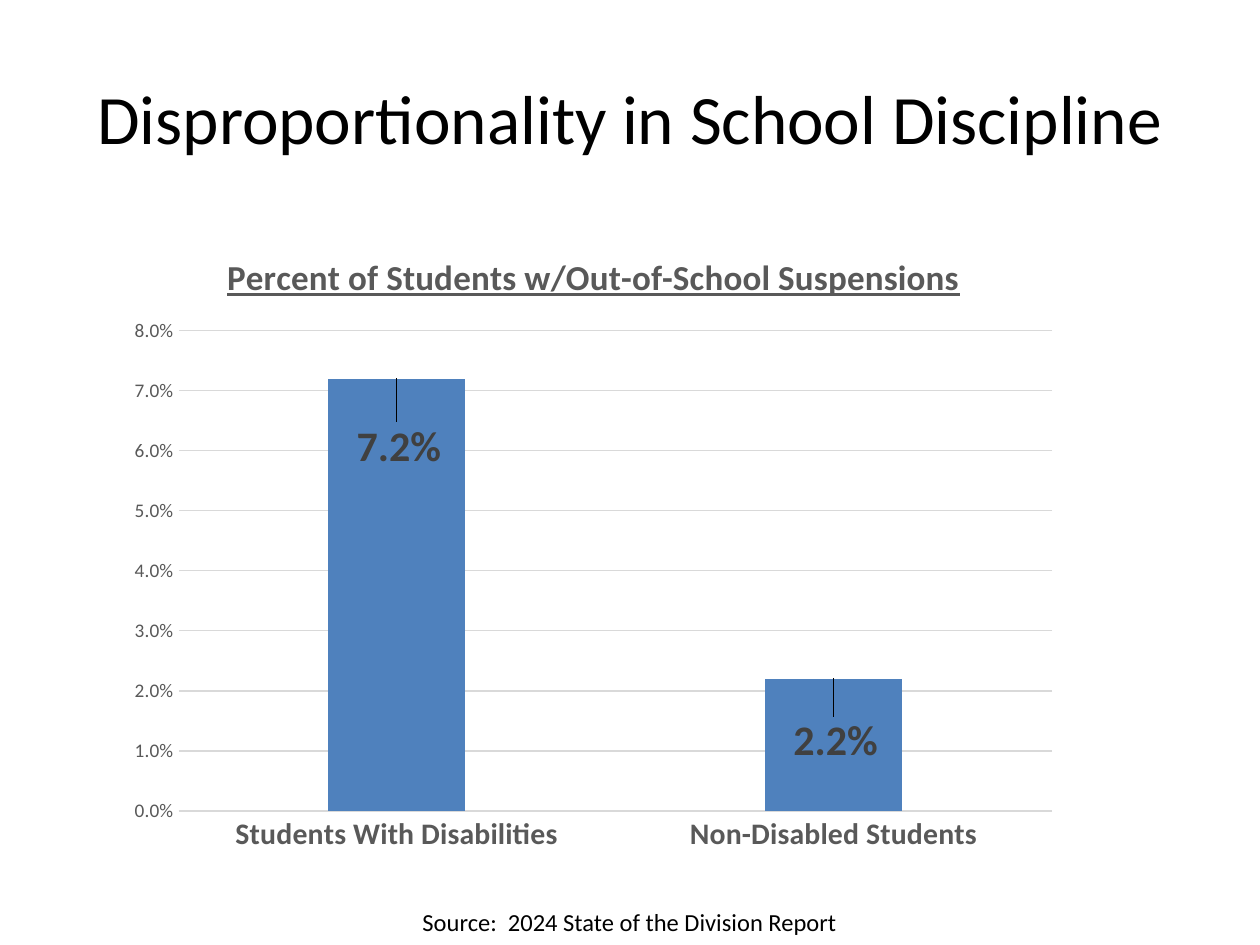
from dataclasses import dataclass
from lxml.etree import SubElement
from pptx import Presentation
from pptx.chart.data import CategoryChartData as ChartData
from pptx.dml.color import RGBColor as Rgb
from pptx.enum.chart import XL_CHART_TYPE as Kind, XL_LABEL_POSITION as Pos, XL_TICK_MARK as Tick
from pptx.enum.text import MSO_ANCHOR as Anchor, PP_ALIGN as Align
from pptx.oxml import parse_xml
from pptx.oxml.ns import nsdecls, qn
from pptx.util import Cm, Pt

FACE = "Calibri"
HUES = {"ink": "000000", "gray": "595959", "label": "404040", "grid": "D9D9D9", "bar": "4F81BD"}
WIDE, HIGH = 19.25, 12.78


@dataclass
class Note:
    text: str
    box: tuple[float, float, float, float]
    size: float
    anchor: Anchor


@dataclass
class Bar:
    name: str
    rate: float
    drop: float


NOTES = [
    Note("Disproportionality in School Discipline", (1.27, 0.76, 22.86, 3.18), 39.6, Anchor.MIDDLE),
    Note("Source:  2024 State of the Division Report", (4.02, 18.16, 17.35, 0.86), 14, Anchor.TOP),
]
BARS = [
    Bar("Students With Disabilities", 0.072, 2.0),
    Bar("Non-Disabled Students", 0.022, 1.89),
]


def style(font, size: float, hue: str, bold: bool = False) -> None:
    """Set the face, size, colour and weight of a font."""
    font.name, font.size, font.bold = FACE, Pt(size), bold
    font.color.rgb = Rgb.from_string(HUES[hue])


def rule(line) -> None:
    """Give a chart line its thin light look."""
    line.color.rgb = Rgb.from_string(HUES["grid"])
    line.width = Pt(0.75)


def layout(modes: dict[str, str], **sides: float):
    """Make a manual chart layout from modes and sides in centimetres."""
    node = parse_xml(f"<c:layout {nsdecls('c')}/>")
    manual = SubElement(node, qn("c:manualLayout"))
    spans = {key: val / (WIDE if key in "xw" else HIGH) for key, val in sides.items()}
    for key, val in (modes | spans).items():
        SubElement(manual, qn(f"c:{key}")).set("val", str(val))
    return node


def write(slide, note: Note) -> None:
    """Add a centred text box."""
    frame = slide.shapes.add_textbox(*map(Cm, note.box)).text_frame
    frame.word_wrap = True
    frame.vertical_anchor = note.anchor
    para = frame.paragraphs[0]
    para.text, para.alignment = note.text, Align.CENTER
    style(para.font, note.size, "ink")


def head(chart) -> None:
    """Add the underlined chart title."""
    chart.has_title = True
    title = chart.chart_title
    para = title.text_frame.paragraphs[0]
    para.text = "Percent of Students w/Out-of-School Suspensions"
    style(para.font, 20, "gray", True)
    para.font.underline = True
    title.include_in_layout = False
    root = title._element
    for old in root.findall(qn("c:layout")):
        root.remove(old)
    root.find(qn("c:tx")).addnext(layout({"xMode": "edge", "yMode": "edge"}, x=2.11, y=0.31))


def axes(chart) -> None:
    """Style both axes and the grid."""
    cat, val = chart.category_axis, chart.value_axis
    for axis in (cat, val):
        axis.major_tick_mark = axis.minor_tick_mark = Tick.NONE
    style(cat.tick_labels.font, 17, "gray", True)
    style(val.tick_labels.font, 11, "gray")
    rule(cat.format.line)
    rule(val.major_gridlines.format.line)
    val.format.line.fill.background()
    val.minimum_scale, val.maximum_scale, val.major_unit = 0, 0.08, 0.01
    val.tick_labels.number_format = "0.0%"
    val.tick_labels.number_format_is_linked = False


def tags(series) -> None:
    """Move the value labels into the bars, with leader lines."""
    labels = series.data_labels
    labels.show_value = True
    labels.number_format, labels.number_format_is_linked = "0.0%", False
    style(labels.font, 24, "label", True)
    for i in range(len(BARS)):
        label = series.points[i].data_label
        style(label.font, 24, "label", True)
        label.position = Pos.OUTSIDE_END
    for bar, node in zip(BARS, labels._element.findall(qn("c:dLbl"))):
        node.find(qn("c:idx")).addnext(layout({}, x=0.04, y=bar.drop))
    labels._element.append(parse_xml(
        f"<c:extLst {nsdecls('c')}><c:ext uri='{{CE6537A1-D6FC-4f65-9D91-7224C49458BB}}' "
        "xmlns:c15='http://schemas.microsoft.com/office/drawing/2012/chart'>"
        "<c15:showLeaderLines val='1'/></c:ext></c:extLst>"))


def graph(slide) -> None:
    """Add the column chart."""
    data = ChartData(number_format="0.0%")
    data.categories = [bar.name for bar in BARS]
    data.add_series("Series 1", [bar.rate for bar in BARS])
    box = map(Cm, (2.34, 4.65, WIDE, HIGH))
    chart = slide.shapes.add_chart(Kind.COLUMN_CLUSTERED, *box, data).chart
    style(chart.font, 10, "ink")
    chart.has_legend = False
    head(chart)
    axes(chart)
    plot = chart.plots[0]
    plot.gap_width, plot.overlap, plot.vary_by_categories = 219, -27, False
    series = plot.series[0]
    series.format.fill.solid()
    series.format.fill.fore_color.rgb = Rgb.from_string(HUES["bar"])
    tags(series)
    area = plot._element.getparent()
    for old in area.findall(qn("c:layout")):
        area.remove(old)
    modes = {"layoutTarget": "inner", "xMode": "edge", "yMode": "edge"}
    area.insert(0, layout(modes, x=1.26, y=2.02, w=17.61, h=9.68))


def main() -> None:
    """Build and save the slide."""
    deck = Presentation()
    deck.slide_width, deck.slide_height = Cm(25.4), Cm(19.05)
    slide = deck.slides.add_slide(deck.slide_layouts[6])
    graph(slide)
    for note in NOTES:
        write(slide, note)
    deck.save("out.pptx")


if __name__ == "__main__":
    main()
